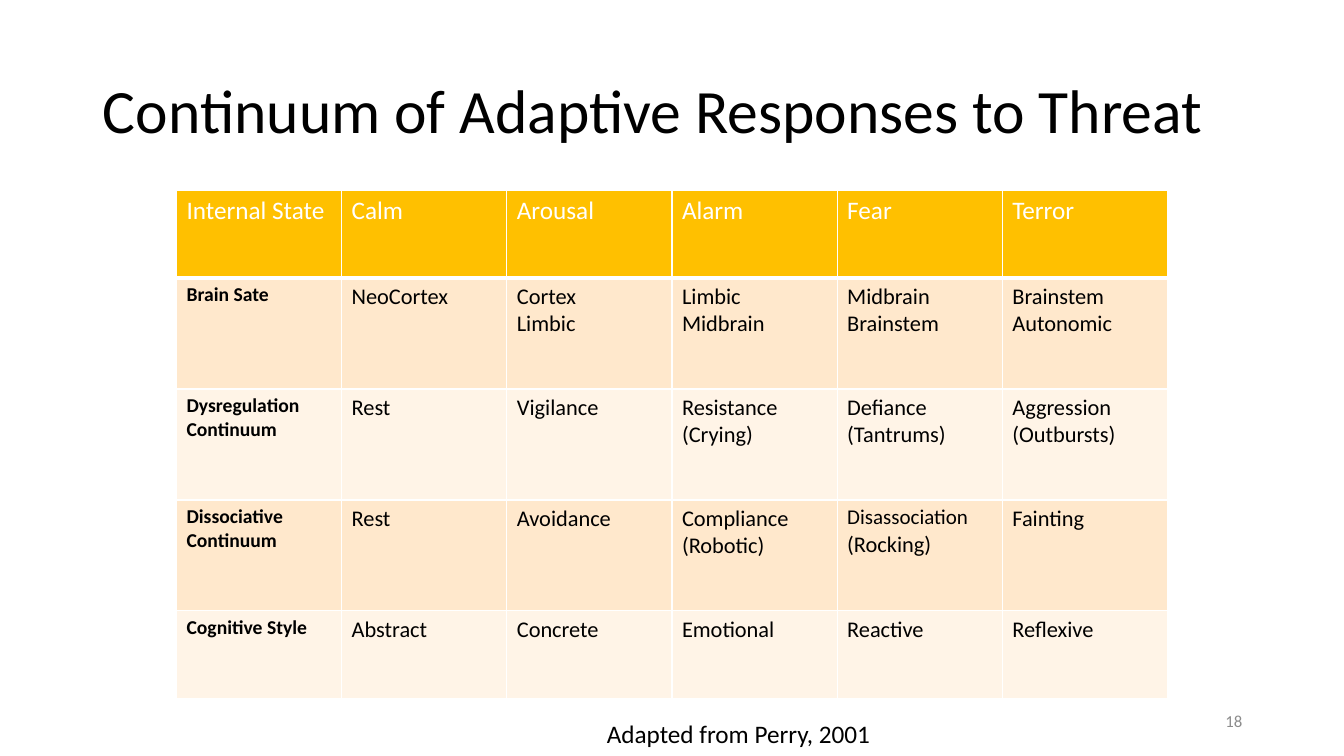
from dataclasses import dataclass

import pptx
import pptx.dml.color
import pptx.enum.text
import pptx.oxml
import pptx.oxml.ns
import pptx.util
from pptx.dml.color import RGBColor
from pptx.util import Inches

BLACK = RGBColor(0x00, 0x00, 0x00)
WHITE = RGBColor(0xFF, 0xFF, 0xFF)
GRAY = RGBColor(0x8C, 0x8C, 0x8C)
GOLD = RGBColor(0xFF, 0xC0, 0x00)
PEACH = RGBColor(0xFF, 0xE8, 0xCC)
CREAM = RGBColor(0xFF, 0xF4, 0xE7)

ALIGN = pptx.enum.text.PP_ALIGN
ANCHOR = pptx.enum.text.MSO_ANCHOR


@dataclass(frozen=True)
class TextStyle:
    size: int
    color: RGBColor = BLACK
    bold: bool = False


@dataclass(frozen=True)
class Label:
    text: str
    left: float
    top: float
    width: float
    height: float
    style: TextStyle
    align: ALIGN = ALIGN.LEFT
    anchor: ANCHOR = ANCHOR.TOP


HEADER = TextStyle(18, WHITE)
ROW_NAME = TextStyle(14, bold=True)
RESPONSE = TextStyle(16)
LONG_WORD = TextStyle(15)

TITLE = Label("Continuum of Adaptive Responses to Threat",
              0.92, 0.4, 11.5, 1.45, TextStyle(44), anchor=ANCHOR.MIDDLE)
FOOTERS = [
    Label("18", 9.42, 6.95, 3, 0.4, TextStyle(12, GRAY), ALIGN.RIGHT, ANCHOR.MIDDLE),
    Label("Adapted from Perry, 2001", 5.92, 7.08, 3.92, 0.4, TextStyle(18)),
]

# Each line of a cell is a paragraph of its own
RESPONSES = [
    ["Internal State", "Calm", "Arousal", "Alarm", "Fear", "Terror"],
    ["Brain Sate", "NeoCortex", "Cortex\nLimbic", "Limbic\nMidbrain",
     "Midbrain\nBrainstem", "Brainstem\nAutonomic"],
    ["Dysregulation Continuum", "Rest", "Vigilance", "Resistance\n(Crying)",
     "Defiance\n(Tantrums)", "Aggression\n(Outbursts)"],
    ["Dissociative Continuum", "Rest", "Avoidance", "Compliance\n(Robotic)",
     "Disassociation\n(Rocking)", "Fainting"],
    ["Cognitive Style", "Abstract", "Concrete", "Emotional", "Reactive", "Reflexive"],
]
ROW_HEIGHTS = [0.87, 1.1, 1.1, 1.1, 0.87]
TABLE_LEFT, TABLE_TOP, TABLE_WIDTH = 1.75, 1.89, 9.83


def format_para(para, style: TextStyle) -> None:
    values = {"name": "Calibri", "size": pptx.util.Pt(style.size), "bold": style.bold}
    for span in para.runs:
        for name, value in values.items():
            setattr(span.font, name, value)
        span.font.color.rgb = style.color


def fill_label(box, label: Label) -> None:
    place = {name: Inches(getattr(label, name))
             for name in ("left", "top", "width", "height")}
    for name, value in place.items():
        setattr(box, name, value)
    frame = box.text_frame
    frame.text = label.text
    frame_format = {"word_wrap": True, "vertical_anchor": label.anchor,
                    "auto_size": pptx.enum.text.MSO_AUTO_SIZE.NONE}
    for name, value in frame_format.items():
        setattr(frame, name, value)
    para = frame.paragraphs[0]
    para.alignment = label.align
    format_para(para, label.style)


def add_borders(cell, widths: dict[str, int]) -> None:
    properties = cell._tc.get_or_add_tcPr()
    for side, width in widths.items():
        properties.append(pptx.oxml.parse_xml(
            f'<a:ln{side} {pptx.oxml.ns.nsdecls("a")} w="{pptx.util.Pt(width)}">'
            f'<a:solidFill><a:srgbClr val="{WHITE}"/></a:solidFill></a:ln{side}>'))


def cell_style(row: int, column: int, line: str) -> TextStyle:
    if row == 0:
        return HEADER
    if column == 0:
        return ROW_NAME
    return LONG_WORD if line == "Disassociation" else RESPONSE


def add_response_table(page) -> None:
    column_count = len(RESPONSES[0])
    table = page.shapes.add_table(
        len(RESPONSES), column_count, Inches(TABLE_LEFT), Inches(TABLE_TOP),
        Inches(TABLE_WIDTH), Inches(sum(ROW_HEIGHTS))).table
    for column in table.columns:
        column.width = Inches(TABLE_WIDTH / column_count)
    for row, height in enumerate(ROW_HEIGHTS):
        table.rows[row].height = Inches(height)
        for column, text in enumerate(RESPONSES[row]):
            cell = table.cell(row, column)
            add_borders(cell, {"L": 1, "R": 1, "T": 3 if row == 1 else 1,
                               "B": 3 if row == 0 else 1})
            cell.fill.solid()
            cell.fill.fore_color.rgb = GOLD if row == 0 else (CREAM, PEACH)[row % 2]
            cell.text = text
            for para in cell.text_frame.paragraphs:
                format_para(para, cell_style(row, column, para.text))


def main() -> None:
    deck = pptx.Presentation()
    deck.slide_width, deck.slide_height = Inches(13.33), Inches(7.5)
    page = deck.slides.add_slide(deck.slide_layouts.get_by_name("Title Only"))

    # Title
    fill_label(page.shapes.title, TITLE)
    page.shapes.title.text_frame.paragraphs[0].line_spacing = 0.9

    # Table of responses
    add_response_table(page)

    # Page number and credit
    for label in FOOTERS:
        fill_label(page.shapes.add_textbox(0, 0, 0, 0), label)

    deck.save("out.pptx")


if __name__ == "__main__":
    main()
